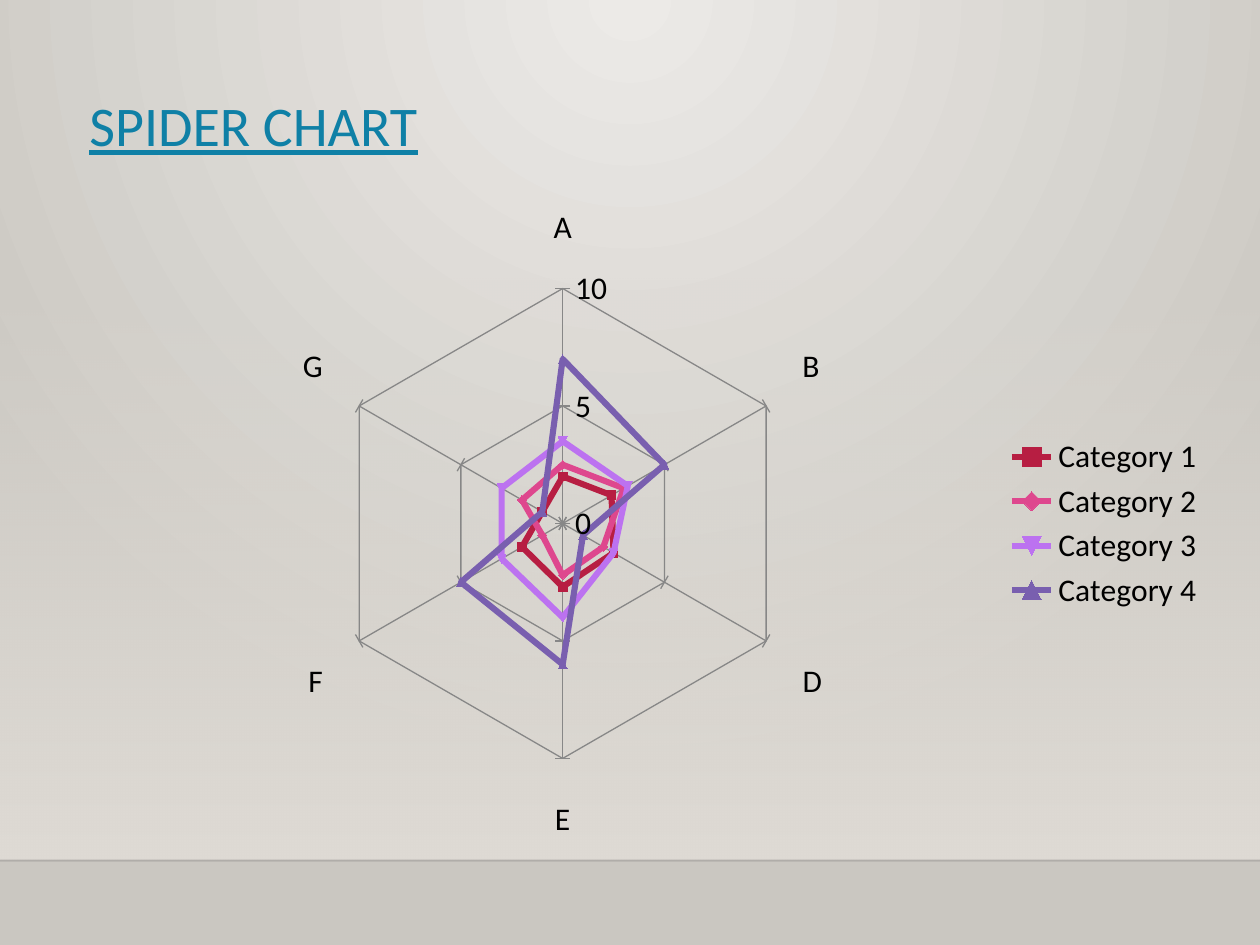
from lxml import etree
from pptx import Presentation
from pptx import util as u
from pptx.chart import data
from pptx.dml.color import RGBColor
from pptx.enum import chart as charts, shapes, text
from pptx.oxml import ns, parse_xml

COLORS = {
    "title": "0F80A6", "text": "000000", "grid": "878787", "divider": "000001",
    "center": "ECEAE7", "edge": "CAC7C1", "haze": "DFDBD5",
}
SERIES = {
    "Category 1": ("B71E42", (2, 2.4, 2.5, 2.7, 2, 1)),
    "Category 2": ("DE478E", (2.5, 3, 2, 2.2, 1, 2)),
    "Category 3": ("BC72F0", (3.5, 3.2, 2.5, 4, 3, 3)),
    "Category 4": ("795FAF", (7, 5, 1, 6, 5, 1)),
}


def write_text(shape, content, size, color, font="Calibri", underline=False, spacing=1.0):
    paragraph = shape.text_frame.paragraphs[0]
    paragraph.alignment = text.PP_ALIGN.LEFT
    paragraph.line_spacing = spacing
    run = paragraph.add_run()
    run.text = content
    run.font.size = u.Pt(size)
    run.font.name = font
    run.font.underline = underline
    run.font.color.rgb = RGBColor.from_string(color)


def set_gradient(fill_parent, start, end, direction, start_alpha=100):
    old_fill = fill_parent.find(ns.qn("a:gradFill"))
    new_fill = parse_xml(
        f'<a:gradFill {ns.nsdecls("a")} rotWithShape="1"><a:gsLst>'
        f'<a:gs pos="0"><a:srgbClr val="{start}"><a:alpha val="{start_alpha * 1000}"/></a:srgbClr></a:gs>'
        f'<a:gs pos="100000"><a:srgbClr val="{end}"/></a:gs>'
        f'</a:gsLst>{direction}</a:gradFill>')
    fill_parent.replace(old_fill, new_fill)


presentation = Presentation()
presentation.slide_width = u.Inches(10)
presentation.slide_height = u.Inches(7.5)
slide = presentation.slides.add_slide(presentation.slide_layouts[5])

background = slide.background.fill
background.gradient()
set_gradient(
    slide.element.cSld.find(ns.qn("p:bg")).find(ns.qn("p:bgPr")),
    COLORS["center"], COLORS["edge"],
    '<a:path path="circle"><a:fillToRect l="43000" r="43000" b="100000"/></a:path>')

haze = slide.shapes.add_shape(
    shapes.MSO_SHAPE.RECTANGLE, 0, u.Inches(2.2), u.Inches(10), u.Inches(4.63))
haze.shadow.inherit = False
haze.line.fill.background()
haze.fill.gradient()
set_gradient(haze.element.spPr, COLORS["haze"], COLORS["haze"],
             '<a:lin ang="5400000" scaled="0"/>', start_alpha=0)

divider = slide.shapes.add_connector(
    shapes.MSO_CONNECTOR.STRAIGHT, 0, u.Inches(6.83), u.Inches(10), u.Inches(6.83))
divider.line.width = u.Pt(1)
divider.line.color.rgb = RGBColor.from_string(COLORS["divider"])
divider_color = divider.element.spPr.find(".//" + ns.qn("a:srgbClr"))
etree.SubElement(divider_color, ns.qn("a:alpha"), val="20000")
etree.SubElement(divider.element.spPr, ns.qn("a:effectLst"))

title = slide.shapes.title
title.left, title.top = u.Inches(0.61), u.Inches(0.14)
title.width, title.height = u.Inches(8.78), u.Inches(1.17)
title.text_frame.vertical_anchor = text.MSO_ANCHOR.BOTTOM
write_text(title, "SPIDER CHART", size=32, color=COLORS["title"], underline=True, spacing=0.9)

chart_data = data.CategoryChartData()
chart_data.categories = list("ABDEFG")
for name, (color, values) in SERIES.items():
    chart_data.add_series(name, values)
chart = slide.shapes.add_chart(
    charts.XL_CHART_TYPE.RADAR_MARKERS, u.Inches(0.98), u.Inches(1.55),
    u.Inches(8.68), u.Inches(5.21), chart_data).chart
chart.has_title = False
chart.font.name = "Calibri"
chart.font.size = u.Pt(18)
chart.font.color.rgb = RGBColor.from_string(COLORS["text"])
chart.has_legend = True
chart.legend.position = charts.XL_LEGEND_POSITION.RIGHT
chart.legend.include_in_layout = False

category_axis, value_axis = chart.category_axis, chart.value_axis
category_axis.major_tick_mark = charts.XL_TICK_MARK.OUTSIDE
value_axis.major_tick_mark = charts.XL_TICK_MARK.CROSS
value_axis.minimum_scale, value_axis.maximum_scale = 0, 10
value_axis.major_unit = 5
value_axis.tick_labels.number_format = "General"
value_axis.tick_labels.number_format_is_linked = False
for axis in (category_axis, value_axis):
    axis.has_major_gridlines = True
    for line in (axis.format.line, axis.major_gridlines.format.line):
        line.width = u.Pt(0.75)
        line.color.rgb = RGBColor.from_string(COLORS["grid"])

for series in chart.plots[0].series:
    color = RGBColor.from_string(SERIES[series.name][0])
    series.smooth = False
    series.format.line.width = u.Pt(3.5)
    series.format.line.color.rgb = color
    series.marker.size = 5
    series.marker.format.fill.solid()
    series.marker.format.fill.fore_color.rgb = color
    series.marker.format.line.color.rgb = color

presentation.save("out.pptx")
